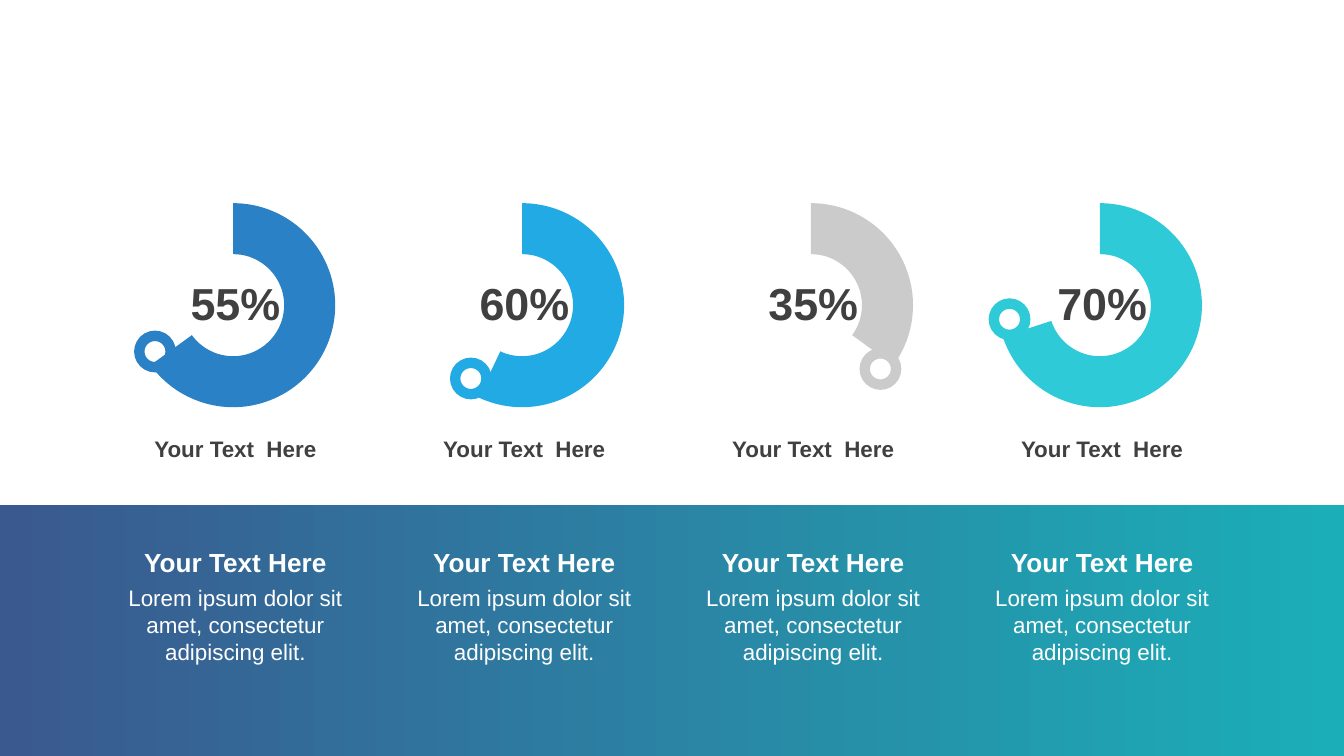
from lxml.etree import SubElement
from pptx import Presentation
from pptx.chart.data import CategoryChartData
from pptx.dml.color import RGBColor
from pptx.enum.chart import XL_CHART_TYPE
from pptx.enum.shapes import MSO_SHAPE
from pptx.enum.text import MSO_ANCHOR, MSO_AUTO_SIZE, PP_ALIGN
from pptx.oxml.ns import qn
from pptx.util import Cm, Pt

FONT = "Arial"
DARK = "404040"
WHITE = "FFFFFF"
COLUMN_LEFT, COLUMN_WIDTH, COLUMN_STEP = 2, 4.9, 5.46
CHART_WIDTH, CHART_HEIGHT, CHART_TOP = 4.29, 3.86, 3.84
MARKER_SIZE = 0.79

GAUGES = [
    ("55%", 65, "2A81C6", (0.23, 2.41)),
    ("60%", 57, "22AAE4", (0.74, 2.92)),
    ("35%", 35, "CBCBCB", (3.02, 2.74)),
    ("70%", 70, "2ECAD7", (0, 1.8)),
]


def rgb(value):
    return RGBColor.from_string(value)


def add_text(page, text, left, top, width, height, size, color, bold=True, anchor=MSO_ANCHOR.TOP):
    box = page.shapes.add_textbox(Cm(left), Cm(top), Cm(width), Cm(height))
    frame = box.text_frame
    frame.word_wrap = True
    frame.auto_size = MSO_AUTO_SIZE.SHAPE_TO_FIT_TEXT
    frame.vertical_anchor = anchor
    para = frame.paragraphs[0]
    para.text = text
    para.alignment = PP_ALIGN.CENTER
    para.font.name = FONT
    para.font.size = Pt(size)
    para.font.bold = bold
    para.font.color.rgb = rgb(color)


def set_plot_box(plot_area, x, y, width, height):
    layout = plot_area.find(qn("c:layout"))
    if layout is None:
        layout = SubElement(plot_area, qn("c:layout"))
        plot_area.insert(0, layout)
    manual = SubElement(layout, qn("c:manualLayout"))
    settings = [("layoutTarget", "inner"), ("xMode", "edge"), ("yMode", "edge"),
                ("x", x), ("y", y), ("w", width), ("h", height)]
    for name, value in settings:
        SubElement(manual, qn(f"c:{name}")).set("val", str(value))


def add_ring(page, value, color, left, top):
    data = CategoryChartData()
    data.categories = ["1", "2"]
    data.add_series("Series 1", (value, 100 - value))
    chart = page.shapes.add_chart(XL_CHART_TYPE.DOUGHNUT, Cm(left), Cm(top),
                                  Cm(CHART_WIDTH), Cm(CHART_HEIGHT), data).chart
    chart.has_legend = False
    chart.has_title = False
    chart.font.name = FONT
    chart.font.size = Pt(18)
    chart.font.color.rgb = rgb("000000")
    plot = chart.plots[0]
    plot.vary_by_categories = True
    filled, empty = (plot.series[0].points[index].format for index in range(2))
    filled.fill.solid()
    filled.fill.fore_color.rgb = rgb(color)
    empty.fill.background()
    for part in (filled, empty):
        part.line.fill.background()
    plot_area = chart.element.find(f".//{qn('c:plotArea')}")
    set_plot_box(plot_area, 0.04, 0, 0.9, 1)
    plot_area.find(f".//{qn('c:holeSize')}").set("val", "80")


def add_marker(page, color, left, top):
    marker = page.shapes.add_shape(MSO_SHAPE.DONUT, Cm(left), Cm(top),
                                   Cm(MARKER_SIZE), Cm(MARKER_SIZE))
    marker.shadow.inherit = False
    marker.fill.solid()
    marker.fill.fore_color.rgb = rgb(color)
    marker.line.fill.background()


def add_gauge(page, left, width, label, value, color, marker_offset):
    chart_left = left + (width - CHART_WIDTH) / 2
    add_ring(page, value, color, chart_left, CHART_TOP)
    add_text(page, label, left + 0.75, 5.08, width - 1.5, 1.27, 24, DARK, anchor=MSO_ANCHOR.MIDDLE)
    offset_x, offset_y = marker_offset
    add_marker(page, color, chart_left + offset_x, CHART_TOP + offset_y)
    add_text(page, "Your Text  Here", left, 8.1, width, 0.77, 12, DARK)


def add_description(page, left, width):
    add_text(page, "Your Text Here", left, 10.21, width, 0.86, 14, WHITE)
    add_text(page, "Lorem ipsum dolor sit amet, consectetur adipiscing elit.",
             left, 10.92, width, 1.8, 12, WHITE, bold=False)


def add_band(page, left, top, width, height):
    band = page.shapes.add_shape(MSO_SHAPE.RECTANGLE, Cm(left), Cm(top), Cm(width), Cm(height))
    band.shadow.inherit = False
    band.line.fill.background()
    band.fill.gradient()
    band.fill.gradient_angle = 0
    for stop, color in zip(band.fill.gradient_stops, ("3A598F", "1BAEB8")):
        stop.color.rgb = rgb(color)


def main():
    deck = Presentation()
    deck.slide_width, deck.slide_height = Cm(25.4), Cm(14.29)
    page = deck.slides.add_slide(deck.slide_layouts[6])
    add_band(page, 0, 9.55, 25.4, 4.74)
    for index, gauge in enumerate(GAUGES):
        left = COLUMN_LEFT + index * COLUMN_STEP
        add_gauge(page, left, COLUMN_WIDTH, *gauge)
        add_description(page, left, COLUMN_WIDTH)
    deck.save("out.pptx")


if __name__ == "__main__":
    main()
